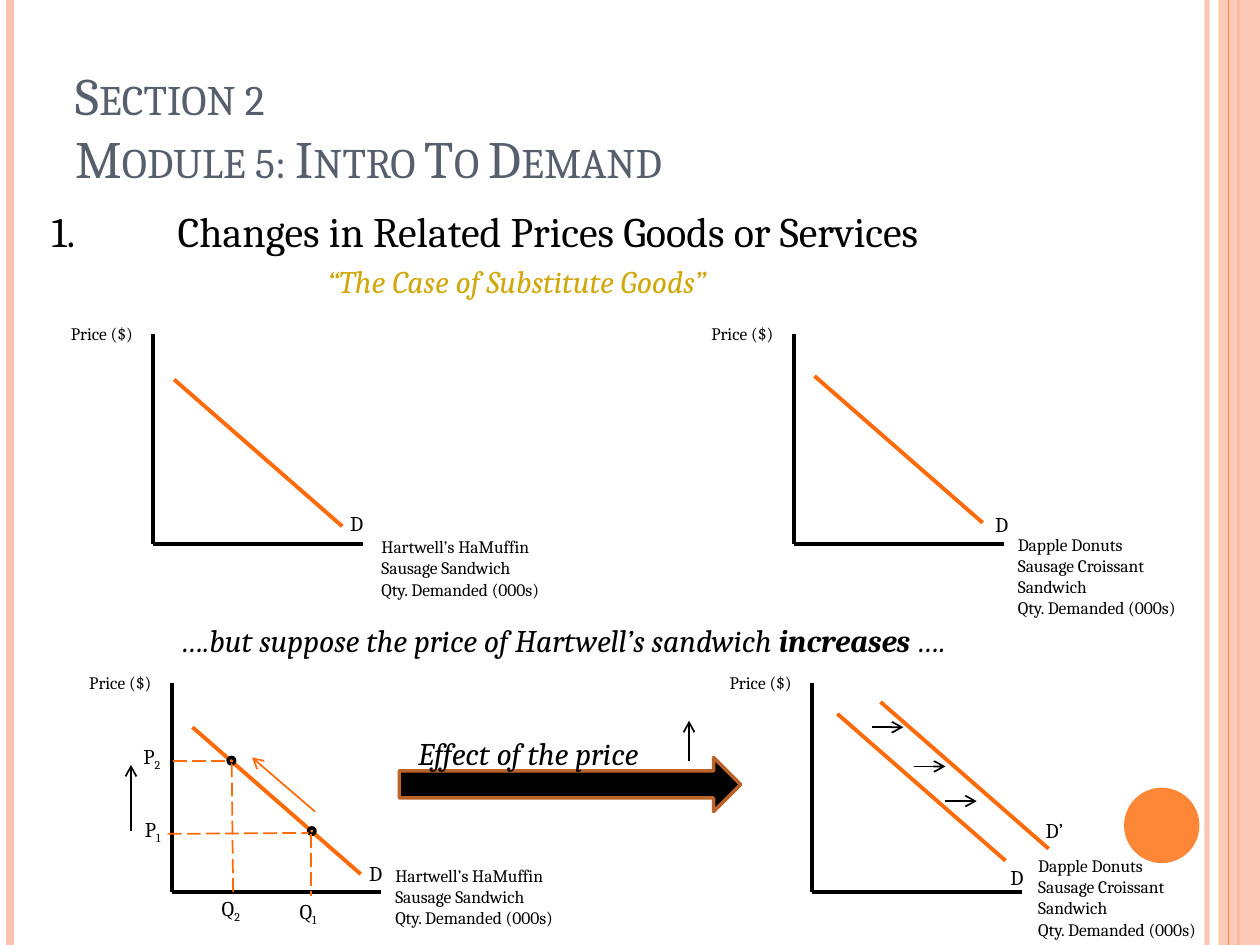
import pptx
import pptx.util
import pptx.dml.color
import pptx.enum.dml
import pptx.enum.shapes
import pptx.enum.text
import pptx.oxml
import pptx.oxml.ns
from lxml import etree

Cm, Pt = pptx.util.Cm, pptx.util.Pt
rgb = pptx.dml.color.RGBColor.from_string
qn = pptx.oxml.ns.qn
SHAPE = pptx.enum.shapes.MSO_SHAPE
ORANGE, PEACH, DEMAND, BLACK = "FE8637", "FEC3AE", "FF6B0A", "000000"

prs = pptx.Presentation()
prs.slide_width, prs.slide_height = Cm(25.4), Cm(19.05)
s = prs.slides.add_slide(prs.slide_layouts[6])


def add_line(x1, y1, x2, y2, color, width, dashed=False, arrow=False):
    straight = pptx.enum.shapes.MSO_CONNECTOR.STRAIGHT
    c = s.shapes.add_connector(straight, Cm(x1), Cm(y1), Cm(x2), Cm(y2))
    c.line.color.rgb = rgb(color)
    c.line.width = Pt(width)
    if dashed:
        c.line.dash_style = pptx.enum.dml.MSO_LINE.LONG_DASH
    if arrow:
        etree.SubElement(c.line._get_or_add_ln(), qn("a:tailEnd"), type="arrow")
    etree.SubElement(c._element.spPr, qn("a:effectLst"))
    return c


def add_text(x, y, w, h, paragraphs, size, color=BLACK, wrap=False, **font):
    """Each paragraph is a list of (text, font values) runs."""
    sp = s.shapes.add_textbox(Cm(x), Cm(y), Cm(w), Cm(h))
    tf = sp.text_frame
    tf.word_wrap = wrap
    for i, runs in enumerate(paragraphs):
        p = tf.paragraphs[0] if i == 0 else tf.add_paragraph()
        for words, extra in runs:
            r = p.add_run()
            r.text = words
            values = {"name": "Cambria", "size": Pt(size), **font, **extra}
            for key, value in values.items():
                setattr(r.font, key, value)
            r.font.color.rgb = rgb(color)
    return sp


# Side bands and page disc
pale = add_line(24.33, 0, 24.33, 19.05, PEACH, 3)
add_line(0.2, 0, 0.2, 19.05, PEACH, 4.5)
add_line(24.97, 0, 24.97, 19.05, ORANGE, 1.5)
band = s.shapes.add_shape(SHAPE.RECTANGLE, Cm(24.56), 0, Cm(0.84), Cm(19.05))
disc = s.shapes.add_shape(SHAPE.OVAL, Cm(22.66), Cm(15.88), Cm(1.52), Cm(1.52))
for sp, color in ((band, PEACH), (disc, ORANGE)):
    sp.shadow.inherit = False
    sp.fill.solid()
    sp.fill.fore_color.rgb = rgb(color)
    sp.line.fill.background()
for sp, alpha in ((pale, "93000"), (band, "87000")):
    clr = next(sp._element.spPr.iter(qn("a:srgbClr")))
    etree.SubElement(clr, qn("a:alpha"), val=alpha)
add_line(24.77, 0, 24.77, 19.05, ORANGE, 0.75)

# Title in small capitals
sp = add_text(1.27, 0.76, 20.75, 3.18, [[]], 30, wrap=True)
tf = sp.text_frame
tf.vertical_anchor = pptx.enum.text.MSO_ANCHOR.BOTTOM
p = tf.paragraphs[0]
p.text = "Section 2\vModule 5: Intro To Demand"
for r in p.runs:
    for key, value in {"name": "Cambria", "size": Pt(30)}.items():
        setattr(r.font, key, value)
    r.font.color.rgb = rgb("575F6D")
    r.font._element.set("cap", "small")

# Headings
sp = add_text(0.79, 4.01, 20.75, 1.47,
              [[("1.\tChanges in Related Prices Goods or Services", {})]], 24, wrap=True)
p = sp.text_frame.paragraphs[0]
p.space_before = Pt(6)
tabs = etree.SubElement(p._p.get_or_add_pPr(), qn("a:tabLst"))
etree.SubElement(tabs, qn("a:tab"), pos=str(Cm(2.54)), algn="l")
add_text(6.35, 5.16, 9.75, 1.02, [[("“The Case of Substitute Goods”", {})]],
         18, "D0A80A", italic=True)
add_text(3.4, 12.4, 19.13, 1.02,
         [[("….but suppose the price of Hartwell’s sandwich ", {}),
           ("increases", {"bold": True}), (" ….", {})]], 18, italic=True)

# Four graphs: axis corner, demand start, D label, caption box, caption
SIDE, RUN, DROP = 4.23, 3.39, 2.96
muffin = ["Hartwell’s HaMuffin", "Sausage Sandwich", "Qty. Demanded (000s)"]
croissant = ["Dapple Donuts", "Sausage Croissant", "Sandwich", "Qty. Demanded (000s)"]
graphs = [
    (3.09, 6.73, (3.51, 7.65), (6.81, 10.16), (7.44, 10.69, 4.24, 1.96), muffin),
    (16.0, 6.73, (16.42, 7.58), (19.81, 10.19), (20.27, 10.64, 4.17, 2.39), croissant),
    (3.46, 13.76, (3.88, 14.66), (7.19, 17.22), (7.72, 17.32, 4.24, 1.96), muffin),
    (16.37, 13.76, (16.88, 14.39), (20.12, 17.3), (20.68, 17.12, 4.17, 2.39), croissant),
]
for x, y, (dx, dy), label, box, caption in graphs:
    add_line(x, y, x, y + SIDE, BLACK, 2.25)
    add_line(x, y + SIDE, x + SIDE, y + SIDE, BLACK, 2.25)
    add_line(dx, dy, dx + RUN, dy + DROP, DEMAND, 2.25)
    add_text(x - 1.91, y - 0.34, 1.91, 0.68, [[("Price ($)", {})]], 10)
    add_text(*label, 0.84, 0.77, [[("D", {})]], 12)
    add_text(*box, [[(words, {})] for words in caption], 10)

# Shifted demand curve
add_line(17.75, 14.15, 17.75 + RUN, 14.15 + DROP, DEMAND, 2.25)
add_text(20.83, 16.36, 0.94, 0.77, [[("D’", {})]], 12)
for x, y in ((17.57, 14.66), (18.42, 15.45), (19.05, 16.15)):
    add_line(x, y, x + 0.64, y, BLACK, 1, arrow=True)

# Points on the demand curve with guide lines
for x, y in ((4.6, 15.27), (6.22, 16.69)):
    dot = s.shapes.add_shape(SHAPE.OVAL, Cm(x), Cm(y), Cm(0.13), Cm(0.13))
    dot.shadow.inherit = False
    dot.fill.solid()
    dot.fill.fore_color.rgb = rgb(ORANGE)
    dot.line.color.rgb = rgb(BLACK)
    dot.line.width = Pt(2)
for ends in ((3.38, 16.81, 6.22, 16.79), (3.48, 15.34, 4.7, 15.34),
             (4.67, 15.39, 4.7, 17.98), (6.27, 16.81, 6.27, 18.06)):
    add_line(*ends, DEMAND, 1, dashed=True)
for letter, digit, x, y in (("Q", "2", 4.22, 17.93), ("Q", "1", 5.79, 17.98),
                            ("P", "2", 2.64, 14.86), ("P", "1", 2.67, 16.33)):
    sp = add_text(x, y, 1, 0.77, [[(letter, {}), (digit, {})]], 12)
    sp.text_frame.paragraphs[0].runs[1].font._element.set("baseline", "-25000")

# Effect of the price rise
add_line(2.64, 16.76, 2.64, 15.42, BLACK, 1, arrow=True)
add_line(6.35, 16.36, 5.08, 15.27, DEMAND, 1, arrow=True)
sp = s.shapes.add_shape(SHAPE.RIGHT_ARROW, Cm(8.05), Cm(15.27), Cm(6.88), Cm(1.09))
sp.shadow.inherit = False
sp.fill.solid()
sp.fill.fore_color.rgb = rgb(BLACK)
sp.line.color.rgb = rgb("BC6329")
sp.line.width = Pt(2)
add_text(8.18, 14.68, 5.92, 1.02, [[("Effect of the price", {})]], 18, italic=True)
add_line(13.89, 15.34, 13.89, 14.53, BLACK, 1, arrow=True)

prs.save("out.pptx")
